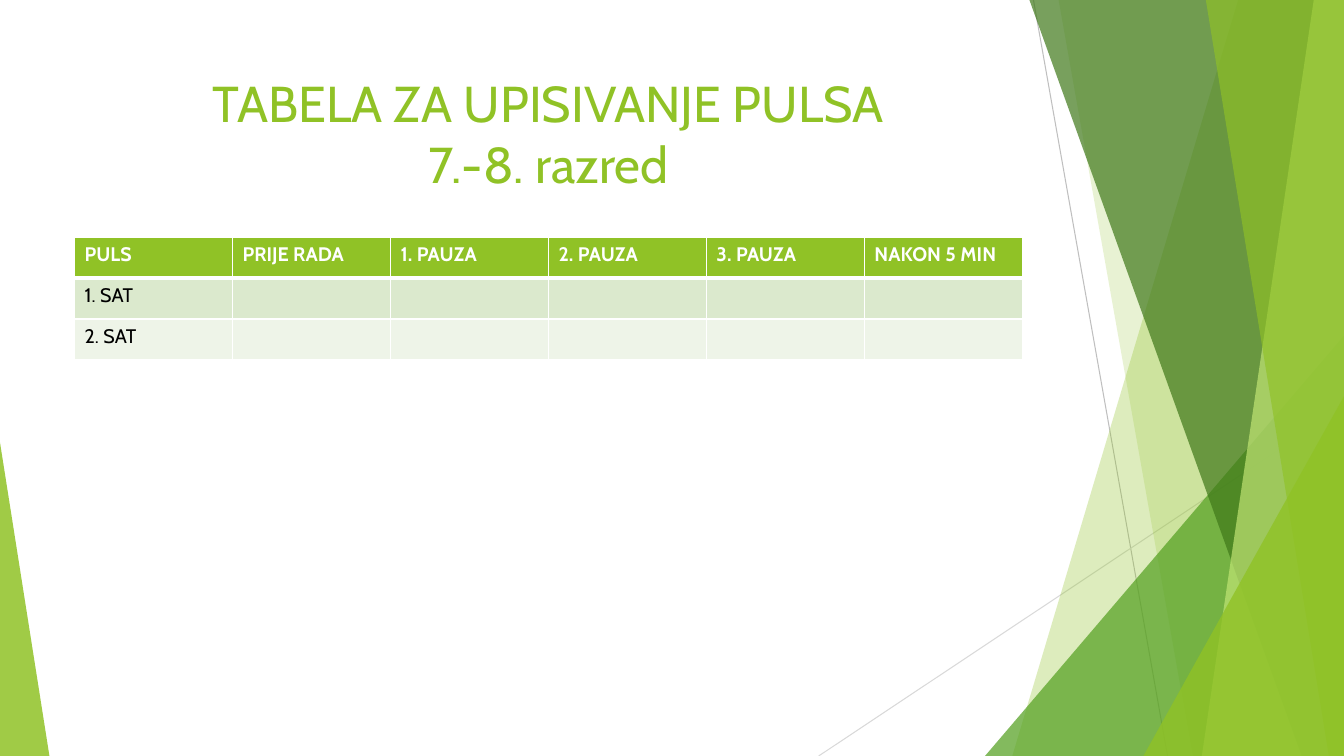
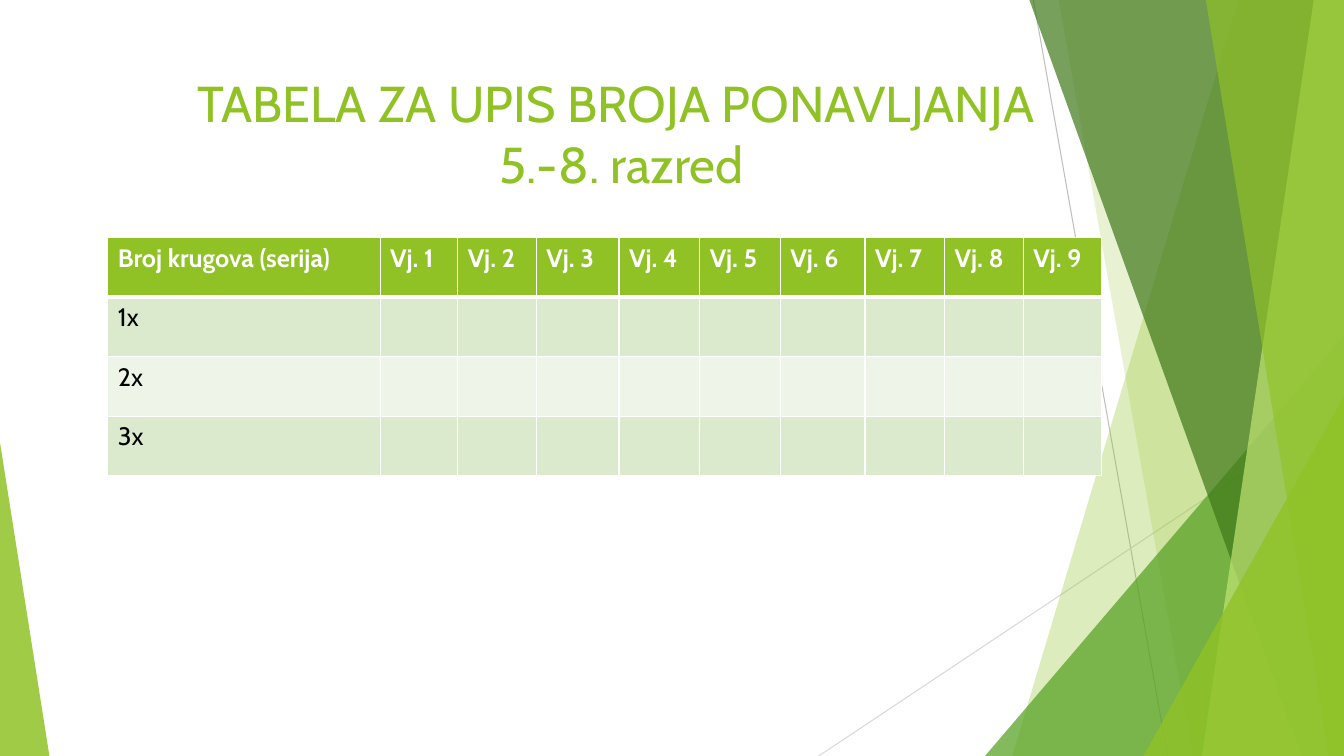
from lxml import etree
from pptx import Presentation
from pptx.dml.color import RGBColor
from pptx.enum.shapes import MSO_CONNECTOR, MSO_SHAPE
from pptx.enum.text import MSO_ANCHOR, MSO_AUTO_SIZE, PP_ALIGN
from pptx.oxml.ns import qn
from pptx.util import Inches, Pt

STRAIGHT = MSO_CONNECTOR.STRAIGHT
TRIANGLE = MSO_SHAPE.ISOSCELES_TRIANGLE
TOP = MSO_ANCHOR.TOP
NO_AUTOFIT = MSO_AUTO_SIZE.NONE
CENTER = PP_ALIGN.CENTER

WIDTH, HEIGHT = 13.33, 7.5
TITLE_ONLY = 5
FONT = "Cabin"
COLORS = {
    "lime": "90C226",
    "green": "54A021",
    "forest": "3F7819",
    "light_lime": "C0E474",
    "gray": "BFBFBF",
    "light_gray": "D9D9D9",
    "odd_row": "DBE9CD",
    "even_row": "EEF4E8",
    "white": "FFFFFF",
    "black": "000000",
}


def rgb(name):
    return RGBColor.from_string(COLORS[name])


class Deck:
    def __init__(self):
        self.presentation = Presentation()
        self.presentation.slide_width = Inches(WIDTH)
        self.presentation.slide_height = Inches(HEIGHT)
        self.slide = None

    def add_slide(self, title, left, width):
        layout = self.presentation.slide_layouts[TITLE_ONLY]
        self.slide = self.presentation.slides.add_slide(layout)
        self.decorate()
        self.title(title, left, width)

    def decorate(self):
        self.line(10.25, 0, 11.58, HEIGHT, "gray")
        self.line(WIDTH, 4.03, 8.12, HEIGHT, "light_gray")
        self.band(12.28, 10.04, "lime", 30)
        self.band(10.5, 11.83, "lime", 20)
        self.triangle(9.77, 3.56, 4.17, 1, "green", 72)
        self.band(10.21, 12.91, "forest", 70)
        self.band(13.03, 11.92, "light_lime", 70)
        self.band(11.96, 13.18, "lime", 65)
        self.triangle(11.34, 1.99, 3.57, 1, "lime", 80)
        self.triangle(0, 0.49, 3.11, 0, "lime", 85)

    def line(self, x1, y1, x2, y2, color):
        connector = self.slide.shapes.add_connector(
            STRAIGHT, Inches(x1), Inches(y1), Inches(x2), Inches(y2))
        connector.line.color.rgb = rgb(color)
        connector.line.width = Pt(0.75)
        properties = connector.element.find(qn("p:spPr"))
        etree.SubElement(properties, qn("a:effectLst"))

    def band(self, top_x, bottom_x, color, opacity):
        builder = self.slide.shapes.build_freeform(Inches(top_x), 0)
        corners = [(WIDTH, 0), (WIDTH, HEIGHT), (bottom_x, HEIGHT)]
        builder.add_line_segments([(Inches(x), Inches(y)) for x, y in corners])
        self.paint(builder.convert_to_shape(), color, opacity)

    def triangle(self, left, width, height, apex, color, opacity):
        shape = self.slide.shapes.add_shape(
            TRIANGLE, Inches(left), Inches(HEIGHT - height),
            Inches(width), Inches(height))
        shape.adjustments[0] = apex
        self.paint(shape, color, opacity)

    def paint(self, shape, color, opacity):
        shape.shadow.inherit = False
        shape.line.fill.background()
        shape.fill.solid()
        shape.fill.fore_color.rgb = rgb(color)
        fill_color = shape.element.spPr.find(qn("a:solidFill")).find(qn("a:srgbClr"))
        etree.SubElement(fill_color, qn("a:alpha"), val=str(opacity * 1000))

    def title(self, text, left, width):
        title = self.slide.shapes.title
        title.left, title.top = Inches(left), Inches(0.67)
        title.width, title.height = Inches(width), Inches(1.44)
        frame = title.text_frame
        frame.text = text
        frame.word_wrap = True
        frame.auto_size = NO_AUTOFIT
        frame.vertical_anchor = TOP
        frame.paragraphs[0].alignment = CENTER
        self.format_text(frame, 36, "lime", False)
        title.element.getparent().append(title.element)

    def format_text(self, frame, size, color, bold):
        for paragraph in frame.paragraphs:
            for run in paragraph.runs:
                run.font.name = FONT
                run.font.size = Pt(size)
                run.font.bold = bold
                run.font.color.rgb = rgb(color)

    def table(self, left, column_widths, row_height, headers, row_labels, size):
        row_count = len(row_labels) + 1
        table = self.slide.shapes.add_table(
            row_count, len(headers), Inches(left), Inches(2.36),
            Inches(sum(column_widths)), Inches(row_height * row_count)).table
        for column, width in zip(table.columns, column_widths):
            column.width = Inches(width)
        for column_index, header in enumerate(headers):
            self.cell(table.cell(0, column_index), header, 0, size)
        for row_index, label in enumerate(row_labels, 1):
            for column_index in range(len(headers)):
                text = label if column_index == 0 else ""
                self.cell(table.cell(row_index, column_index), text, row_index, size)

    def cell(self, cell, text, row_index, size):
        is_header = row_index == 0
        self.borders(cell, top=3 if row_index == 1 else 1, bottom=3 if is_header else 1)
        cell.fill.solid()
        row_color = "odd_row" if row_index % 2 else "even_row"
        cell.fill.fore_color.rgb = rgb("lime" if is_header else row_color)
        if text:
            cell.text_frame.text = text
            self.format_text(cell.text_frame, size, "white" if is_header else "black", is_header)

    def borders(self, cell, top, bottom):
        properties = cell._tc.get_or_add_tcPr()
        for tag, points in (("a:lnL", 1), ("a:lnR", 1), ("a:lnT", top), ("a:lnB", bottom)):
            border = etree.SubElement(properties, qn(tag), w=str(Pt(points)))
            fill = etree.SubElement(border, qn("a:solidFill"))
            etree.SubElement(fill, qn("a:srgbClr"), val=COLORS["white"])

    def save(self):
        self.presentation.save("out.pptx")


def main():
    deck = Deck()

    deck.add_slide("TABELA ZA UPISIVANJE PULSA\v7.-8. razred", 0.74, 9.4)
    pulse_headers = ["PULS", "PRIJE RADA", "1. PAUZA", "2. PAUZA", "3. PAUZA", "NAKON 5 MIN"]
    deck.table(0.74, [9.4 / 6] * 6, 0.4, pulse_headers, ["1. SAT", "2. SAT"], 14)

    deck.add_slide("TABELA ZA UPIS BROJA PONAVLJANJA \v5.-8. razred", 1.3, 9.73)
    exercise_headers = ["Broj krugova (serija)"] + [f"Vj. {number}" for number in range(1, 10)]
    exercise_widths = [2.7, 0.77, 0.78, 0.82, 0.8, 0.8, 0.84, 0.79, 0.78, 0.78]
    deck.table(1.07, exercise_widths, 0.59, exercise_headers, ["1x", "2x", "3x"], 18)

    deck.save()


if __name__ == "__main__":
    main()
